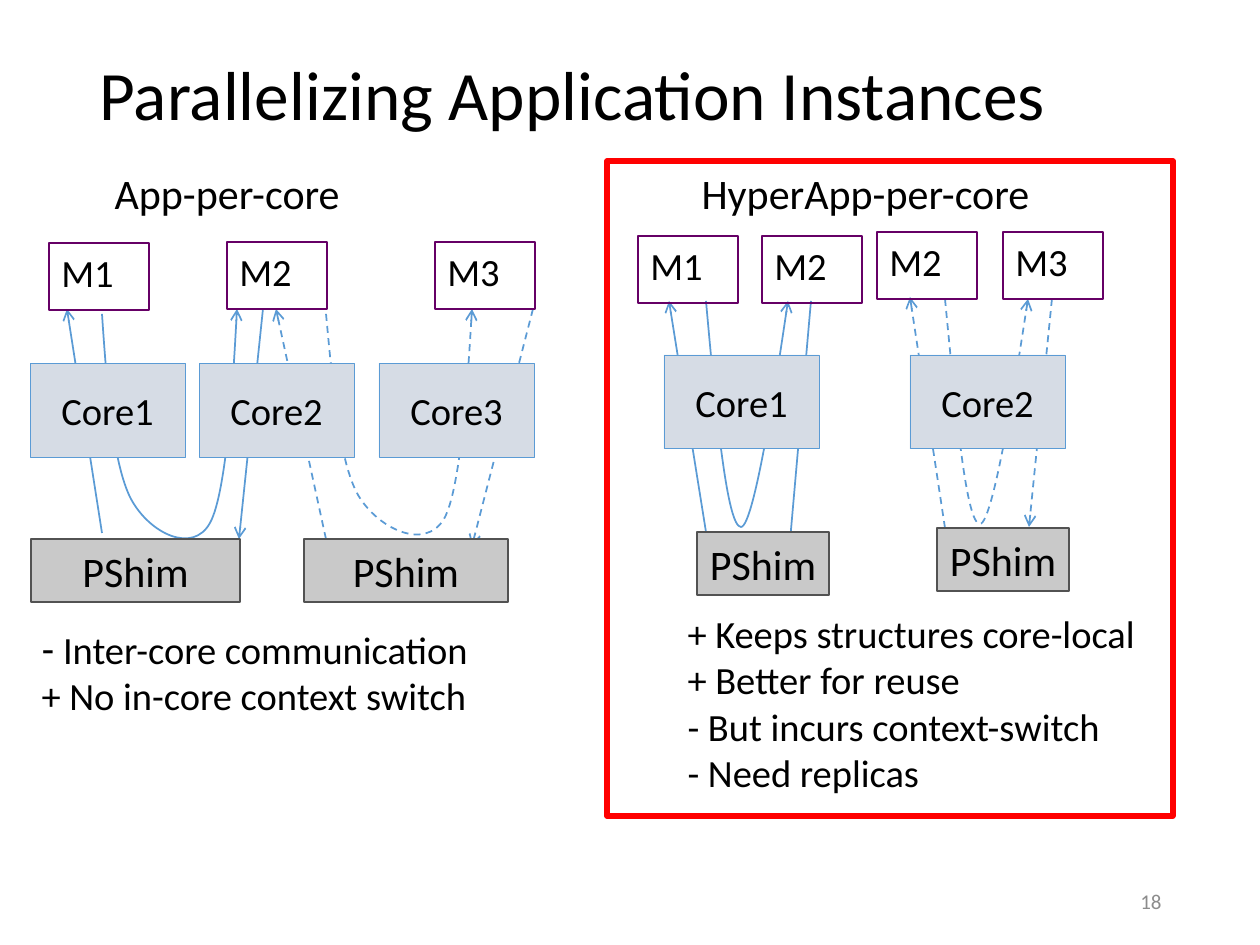
from lxml.etree import SubElement
from pptx import Presentation
from pptx.dml.color import RGBColor
from pptx.enum.dml import MSO_LINE
from pptx.enum.shapes import MSO_CONNECTOR, MSO_SHAPE
from pptx.enum.text import MSO_ANCHOR as ANCHOR, MSO_AUTO_SIZE, PP_ALIGN as ALIGN
from pptx.oxml.ns import qn
from pptx.util import Pt

EMU_PER_PX = 914400 / 126
FONT = "Calibri"
COLORS = {
    "text": "000000", "number": "8C8C8C", "flow": "5B9BD5", "app": "660066",
    "core": "D6DCE5", "shim": "C9C9C9", "shim_line": "525252", "frame": "FF0000",
}


def px(n):
    return round(n * EMU_PER_PX)


def color(name):
    return RGBColor.from_string(COLORS[name])


def place(sp, x, y, w, h):
    sp.left, sp.top, sp.width, sp.height = px(x), px(y), px(w), px(h)


def add_run(p, text, size, name="text"):
    r = p.add_run()
    r.text = text
    r.font.name, r.font.size, r.font.bold = FONT, Pt(size), False
    r.font.color.rgb = color(name)


def set_frame(tf, anchor, wrap=True):
    tf.auto_size = MSO_AUTO_SIZE.NONE
    tf.vertical_anchor = anchor
    tf.word_wrap = wrap


def fill_title(sp, text):
    place(sp, 87, 50, 1086, 96)
    set_frame(sp.text_frame, ANCHOR.MIDDLE)
    p = sp.text_frame.paragraphs[0]
    p.alignment, p.line_spacing = ALIGN.LEFT, 0.9
    add_run(p, text, 39.6)


def fill_body(sp, box, size, lines):
    """Each line is (bullet character or None, text)."""
    place(sp, *box)
    tf = sp.text_frame
    set_frame(tf, ANCHOR.TOP)
    for i, (bullet, text) in enumerate(lines):
        p = tf.add_paragraph() if i else tf.paragraphs[0]
        p.alignment, p.space_before = ALIGN.LEFT, Pt(0)
        pPr = p._p.get_or_add_pPr()
        pPr.set("marL", "0")
        pPr.set("indent", "0")
        if bullet:
            SubElement(pPr, qn("a:buChar"), char=bullet)
        else:
            SubElement(pPr, qn("a:buNone"))
        add_run(p, text, size)


def add_number(s, text):
    sp = s.shapes.add_textbox(px(890), px(876), px(284), px(50))
    set_frame(sp.text_frame, ANCHOR.MIDDLE)
    p = sp.text_frame.paragraphs[0]
    p.alignment = ALIGN.RIGHT
    add_run(p, text, 12, "number")


def add_box(s, x, y, w, h, line, weight, fill=None):
    sp = s.shapes.add_shape(MSO_SHAPE.RECTANGLE, px(x), px(y), px(w), px(h))
    sp.shadow.inherit = False
    if fill:
        sp.fill.solid()
        sp.fill.fore_color.rgb = color(fill)
    else:
        sp.fill.background()
    sp.line.color.rgb, sp.line.width = color(line), Pt(weight)
    return sp


def label(sp, text, size, align, anchor):
    set_frame(sp.text_frame, anchor, wrap=align == ALIGN.LEFT)
    p = sp.text_frame.paragraphs[0]
    p.alignment = align
    add_run(p, text, size)


def add_app(s, text, x, y):
    label(add_box(s, x, y, 100, 67, "app", 0.75), text, 22, ALIGN.LEFT, ANCHOR.TOP)


def add_core(s, text, x, y):
    sp = add_box(s, x, y, 155, 94, "flow", 0.5, "core")
    label(sp, text, 22, ALIGN.CENTER, ANCHOR.MIDDLE)


def add_shim(s, x, y, w):
    sp = add_box(s, x, y, w, 63, "shim_line", 1, "shim")
    label(sp, "PShim", 24, ALIGN.CENTER, ANCHOR.TOP)


def style_flow(line, dashed):
    line.color.rgb, line.width = color("flow"), Pt(1)
    if dashed:
        line.dash_style = MSO_LINE.DASH
    SubElement(line._get_or_add_ln(), qn("a:tailEnd"), type="arrow")


def add_arrow(s, start, end, dashed):
    cx = s.shapes.add_connector(MSO_CONNECTOR.STRAIGHT, *map(px, start + end))
    style_flow(cx.line, dashed)
    SubElement(cx._element.spPr, qn("a:effectLst"))


def add_curve(s, points, bottom, dashed):
    """Draw cubic Béziers: a start, then two controls and an end per segment."""
    pts = [(px(x), px(y)) for x, y in points]
    builder = s.shapes.build_freeform(*pts[0])
    builder.add_line_segments(pts[1:], close=False)
    sp = builder.convert_to_shape()
    outline = sp._element.find(".//" + qn("a:path"))
    steps = outline.findall(qn("a:lnTo"))
    for i in range(0, len(steps), 3):
        bezier = SubElement(outline, qn("a:cubicBezTo"))
        for step in steps[i:i + 3]:
            bezier.append(step[0])
            outline.remove(step)
    # Control points may lie below the curve; the frame ends at the curve.
    sp.height = px(bottom) - sp.top
    outline.set("h", str(sp.height))
    sp.fill.background()
    sp.shadow.inherit = False
    style_flow(sp.line, dashed)


def main():
    prs = Presentation()
    prs.slide_width, prs.slide_height = px(1260), px(945)
    s = prs.slides.add_slide(prs.slide_layouts[4])  # Comparison
    title, left_head, left_list, right_head, right_list = s.placeholders

    fill_title(title, "Parallelizing Application Instances")
    fill_body(left_head, (102, 161, 323, 71), 24, [(None, "App-per-core")])
    fill_body(right_head, (689, 161, 454, 71), 24, [(None, "HyperApp-per-core")])
    fill_body(left_list, (29, 620, 456, 106), 22, [
        ("-", " Inter-core communication"),
        (None, "+ No in-core context switch"),
    ])
    fill_body(right_list, (675, 604, 481, 199), 22, [
        (None, "+ Keeps structures core-local"),
        (None, "+ Better for reuse"),
        (None, "- But incurs context-switch"),
        (None, "- Need replicas"),
    ])
    add_number(s, "18")

    for start, end, dashed in [
        ((326, 539), (276, 309), True), ((533, 309), (472, 546), True),
        ((102, 533), (67, 309), False), ((263, 309), (239, 539), False),
        ((706, 532), (669, 301), False), ((811, 301), (788, 564), False),
        ((945, 528), (910, 297), True), ((1052, 299), (1029, 527), True),
    ]:
        add_arrow(s, start, end, dashed)

    for points, bottom, dashed in [
        ([(326, 314), (333, 388), (339, 461), (358, 495), (378, 529), (425, 551),
          (444, 519), (462, 488), (472, 309), (472, 309)], 534, True),
        ([(102, 314), (107, 388), (113, 464), (131, 499), (150, 534), (193, 554),
          (210, 523), (228, 491), (237, 309), (237, 309)], 539, False),
        ([(706, 301), (716, 413), (727, 527), (741, 527),
          (755, 527), (788, 301), (788, 301)], 527, False),
        ([(945, 299), (956, 412), (966, 524), (980, 524),
          (994, 524), (1028, 299), (1028, 299)], 524, True),
    ]:
        add_curve(s, points, bottom, dashed)

    for text, x, y in [
        ("M1", 49, 243), ("M2", 227, 242), ("M3", 435, 242),
        ("M1", 638, 236), ("M2", 762, 236), ("M2", 877, 232), ("M3", 1003, 232),
    ]:
        add_app(s, text, x, y)
    for text, x, y in [
        ("Core1", 30, 363), ("Core2", 199, 363), ("Core3", 379, 363),
        ("Core1", 664, 355), ("Core2", 910, 355),
    ]:
        add_core(s, text, x, y)
    for x, y, w in [(31, 539, 209), (304, 539, 204), (697, 532, 132), (937, 528, 132)]:
        add_shim(s, x, y, w)

    add_box(s, 607, 161, 566, 655, "frame", 3)
    prs.save("out.pptx")


if __name__ == "__main__":
    main()
